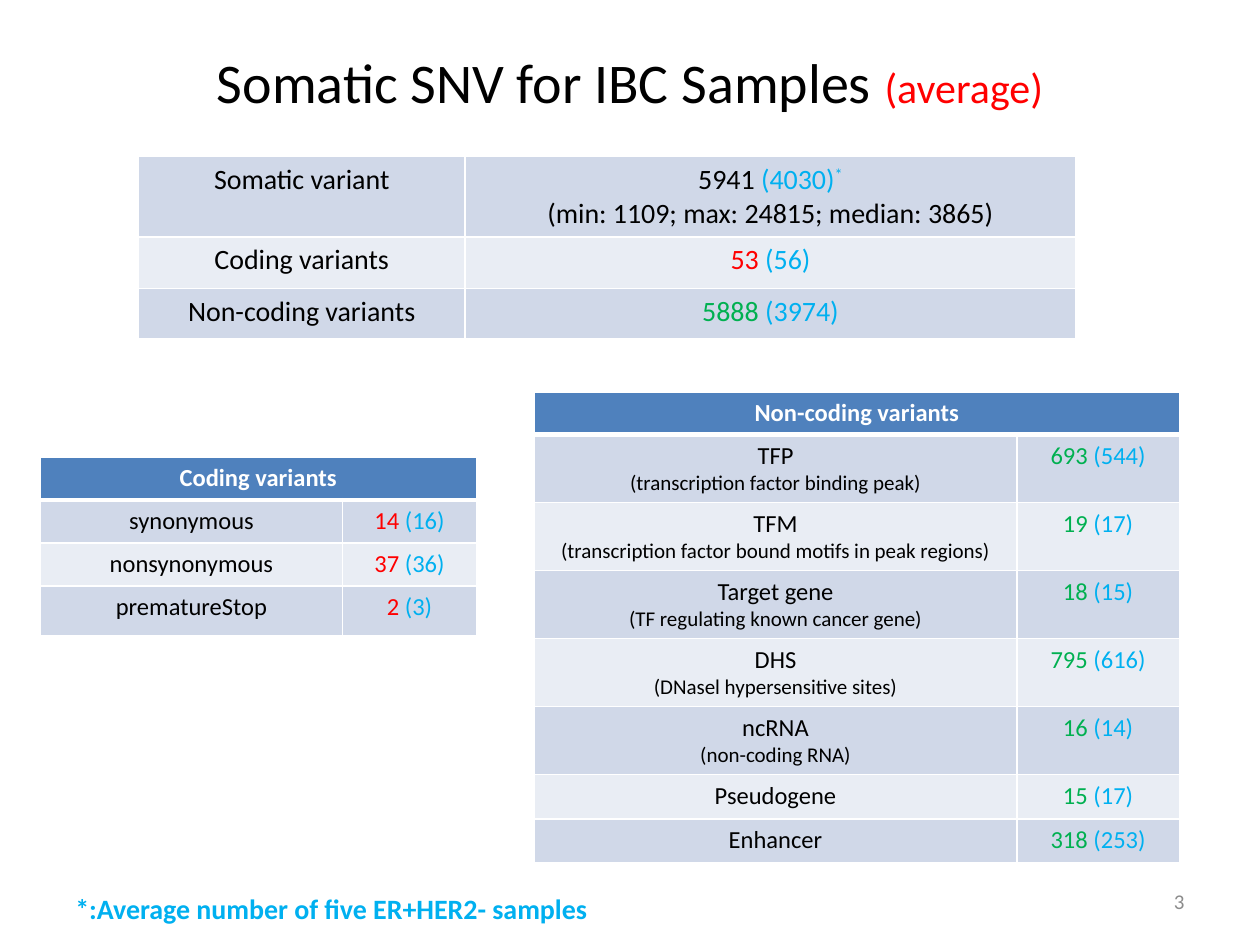
from dataclasses import dataclass

from lxml import etree
from pptx import Presentation
from pptx.dml.color import RGBColor
from pptx.enum.text import MSO_ANCHOR, PP_ALIGN
from pptx.oxml.ns import qn
from pptx.util import Inches, Pt

LEFT, CENTER, RIGHT = PP_ALIGN.LEFT, PP_ALIGN.CENTER, PP_ALIGN.RIGHT
TOP, MIDDLE = MSO_ANCHOR.TOP, MSO_ANCHOR.MIDDLE


@dataclass(frozen=True)
class Theme:
    """Font, colours and type sizes of the slide."""
    font: str = "Calibri"
    black: str = "000000"
    white: str = "FFFFFF"
    red: str = "FF0000"
    green: str = "00B050"
    cyan: str = "00B0F0"
    gray: str = "8C8C8C"
    header: str = "4F81BD"
    bands: tuple = ("D0D8E8", "E9EDF4")
    title: int = 32
    subtitle: int = 24
    large: int = 16
    body: int = 14
    small: int = 12


T = Theme()

SUMMARY = [
    ("Somatic variant", "5941 (4030)", T.black),
    ("Coding variants", "53 (56)", T.red),
    ("Non-coding variants", "5888 (3974)", T.green),
]
CODING = [
    ("synonymous", "", "14 (16)"),
    ("nonsynonymous", "", "37 (36)"),
    ("prematureStop", "", "2 (3)"),
]
NON_CODING = [
    ("TFP", "(transcription factor binding peak)", "693 (544)"),
    ("TFM", "(transcription factor bound motifs in peak regions)", "19 (17)"),
    ("Target gene", "(TF regulating known cancer gene)", "18 (15)"),
    ("DHS", "(DNasel hypersensitive sites)", "795 (616)"),
    ("ncRNA", "(non-coding RNA)", "16 (14)"),
    ("Pseudogene", "", "15 (17)"),
    ("Enhancer", "", "318 (253)"),
]


def add_run(p, text, size, color=T.black, bold=False):
    """Append a formatted run to a paragraph and return it."""
    r = p.add_run()
    r.text = text
    r.font.name, r.font.size, r.font.bold = T.font, Pt(size), bold
    r.font.color.rgb = RGBColor.from_string(color)
    return r


def add_value(p, value, size, color):
    """Write an average followed by its bracketed counterpart in cyan."""
    average, subset = value.split(" ")
    add_run(p, average + " ", size, color)
    add_run(p, subset, size, T.cyan)


def add_text(s, box, align, anchor=TOP):
    """Add a wrapping text box and return its first paragraph."""
    tf = s.shapes.add_textbox(*map(Inches, box)).text_frame
    tf.word_wrap, tf.vertical_anchor = True, anchor
    p = tf.paragraphs[0]
    p.alignment = align
    return p


def style_cell(cell, fill, top=1, bottom=1):
    """Give a cell its fill and white borders."""
    cell.fill.solid()
    cell.fill.fore_color.rgb = RGBColor.from_string(fill)
    tc_pr = cell._tc.get_or_add_tcPr()
    widths = {"lnL": 1, "lnR": 1, "lnT": top, "lnB": bottom}
    for i, (side, width) in enumerate(widths.items()):
        ln = etree.Element(qn(f"a:{side}"), w=str(Pt(width)))
        line_fill = etree.SubElement(ln, qn("a:solidFill"))
        etree.SubElement(line_fill, qn("a:srgbClr"), val=T.white)
        tc_pr.insert(i, ln)


def cell_paragraph(cell, first=True):
    """Return a centred paragraph, the first or a new one, of a cell."""
    tf = cell.text_frame
    p = tf.paragraphs[0] if first else tf.add_paragraph()
    p.alignment = CENTER
    return p


def add_grid(s, left, top, cols, rows, has_header):
    """Add a banded table with the given column widths and row heights."""
    table = s.shapes.add_table(len(rows), len(cols), Inches(left), Inches(top),
                               Inches(sum(cols)), Inches(sum(rows))).table
    table.first_row = has_header
    for col, width in zip(table.columns, cols):
        col.width = Inches(width)
    for i, (row, height) in enumerate(zip(table.rows, rows)):
        row.height = Inches(height)
        is_header = has_header and i == 0
        fill = T.header if is_header else T.bands[(i - has_header) % 2]
        for cell in row.cells:
            style_cell(cell, fill, top=3 if has_header and i == 1 else 1,
                       bottom=3 if is_header else 1)
    return table


def add_summary(s, left, top, cols, rows):
    """Place the table of overall variant counts."""
    table = add_grid(s, left, top, cols, rows, False)
    for i, (label, value, color) in enumerate(SUMMARY):
        add_run(cell_paragraph(table.cell(i, 0)), label, T.large)
        add_value(cell_paragraph(table.cell(i, 1)), value, T.large, color)
    cell = table.cell(0, 1)
    star = add_run(cell.text_frame.paragraphs[0], "*", T.large, T.cyan)
    star._r.get_or_add_rPr().set("baseline", "30000")
    add_run(cell_paragraph(cell, False),
            "(min: 1109; max: 24815; median: 3865)", T.large)


def add_breakdown(s, left, top, cols, rows, heading, items, color):
    """Place a table of variant classes under a merged heading."""
    table = add_grid(s, left, top, cols, rows, True)
    table.cell(0, 0).merge(table.cell(0, 1))
    add_run(cell_paragraph(table.cell(0, 0)), heading, T.body, T.white, True)
    for i, (label, detail, value) in enumerate(items, 1):
        cell = table.cell(i, 0)
        add_run(cell_paragraph(cell), label, T.body)
        if detail:
            add_run(cell_paragraph(cell, False), detail, T.small)
        add_value(cell_paragraph(table.cell(i, 1)), value, T.body, color)


def add_title(s, box):
    """Place the slide title with its red qualifier."""
    p = add_text(s, box, CENTER, MIDDLE)
    add_run(p, "Somatic SNV for IBC Samples ", T.title)
    add_run(p, "(average)", T.subtitle, T.red)


def add_footer(s, note_box, number_box):
    """Place the footnote and the slide number."""
    add_run(add_text(s, note_box, LEFT),
            "*:Average number of five ER+HER2- samples", T.large, T.cyan, True)
    add_run(add_text(s, number_box, RIGHT, MIDDLE), "3", T.small, T.gray)


def main():
    """Build and save the slide."""
    prs = Presentation()
    prs.slide_width, prs.slide_height = Inches(10), Inches(7.5)
    s = prs.slides.add_slide(prs.slide_layouts[6])
    add_title(s, (0.5, 0.14, 9, 1))
    add_summary(s, 1.1, 1.24, (2.59, 4.85), (0.64, 0.41, 0.4))
    add_breakdown(s, 0.32, 3.63, (2.4, 1.06), (0.34, 0.34, 0.34, 0.4),
                  "Coding variants", CODING, T.red)
    add_breakdown(s, 4.24, 3.11, (3.83, 1.29),
                  (0.34, *[0.54] * 5, 0.35, 0.35),
                  "Non-coding variants", NON_CODING, T.green)
    add_footer(s, (0.5, 7.03, 5.7, 0.37), (7.17, 6.95, 2.33, 0.4))
    prs.save("out.pptx")


if __name__ == "__main__":
    main()
